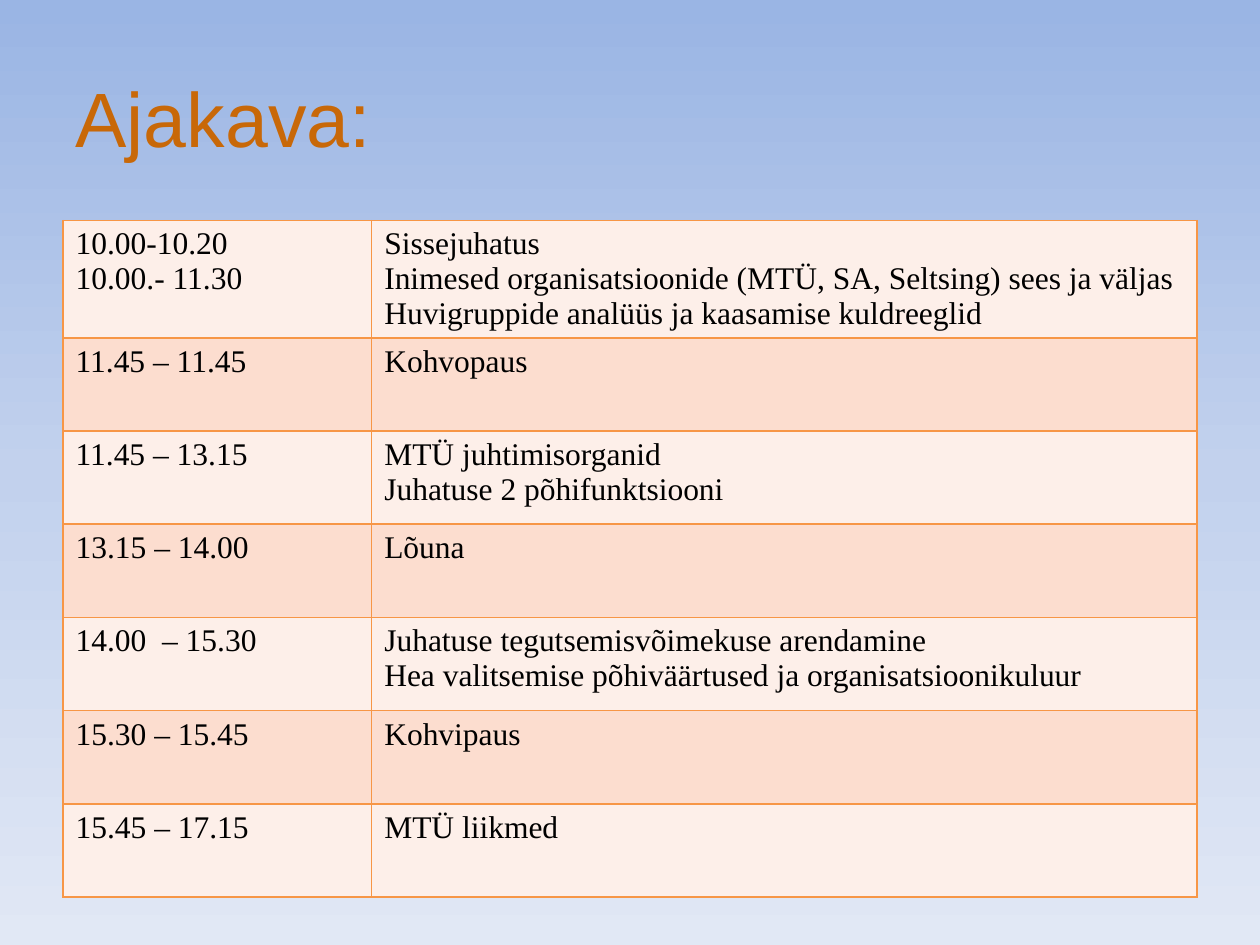
from lxml import etree
from pptx import Presentation
from pptx import util as u
from pptx.dml.color import RGBColor
from pptx.enum import text as t
from pptx.oxml import parse_xml
from pptx.oxml.ns import nsdecls

ROWS = [
    (["10.00-10.20", "10.00.- 11.30"],
     ["Sissejuhatus",
      "Inimesed organisatsioonide (MTÜ, SA, Seltsing) sees ja väljas",
      "Huvigruppide analüüs ja kaasamise kuldreeglid"]),
    (["11.45 – 11.45"], ["Kohvopaus"]),
    (["11.45 – 13.15"], ["MTÜ juhtimisorganid", "Juhatuse 2 põhifunktsiooni"]),
    (["13.15 – 14.00"], ["Lõuna"]),
    (["14.00  – 15.30"],
     ["Juhatuse tegutsemisvõimekuse arendamine",
      "Hea valitsemise põhiväärtused ja organisatsioonikuluur"]),
    (["15.30 – 15.45"], ["Kohvipaus"]),
    (["15.45 – 17.15"], ["MTÜ liikmed"]),
]
COLS = [2.45, 6.55]
ROW_H = 0.74
BANDS = ["FDEFE9", "FCDDCF"]
EDGE = "F79646"
SKY = [(0, "9AB5E4"), (50, "C2D1ED"), (100, "E1E8F5")]


def color(code):
    return RGBColor.from_string(code)


def write(frame, lines, size=18, font="Times New Roman", ink="000000",
          anchor=t.MSO_ANCHOR.TOP):
    """Put one paragraph per line into a text frame."""
    frame.word_wrap = True
    frame.vertical_anchor = anchor
    for i, line in enumerate(lines):
        para = frame.add_paragraph() if i else frame.paragraphs[0]
        para.alignment = t.PP_ALIGN.LEFT
        run = para.add_run()
        run.text = line
        run.font.size = u.Pt(size)
        run.font.name = font
        run.font.color.rgb = color(ink)


def paint(slide, stops):
    """Fill the background with a gradient from top to bottom."""
    marks = "".join(
        f'<a:gs pos="{pos * 1000}"><a:srgbClr val="{code}"/></a:gs>'
        for pos, code in stops)
    back = parse_xml(
        f'<p:bg {nsdecls("p", "a")}><p:bgPr><a:gradFill rotWithShape="1">'
        f'<a:gsLst>{marks}</a:gsLst><a:lin ang="5400000" scaled="0"/>'
        '</a:gradFill><a:effectLst/></p:bgPr></p:bg>')
    slide.shapes._spTree.addprevious(back)


def border(cell, code, width=1):
    """Draw all four edges of a cell; call before its fill is set."""
    props = cell._tc.get_or_add_tcPr()
    for side in "LRTB":
        props.append(parse_xml(
            f'<a:ln{side} {nsdecls("a")} w="{u.Pt(width)}"><a:solidFill>'
            f'<a:srgbClr val="{code}"/></a:solidFill></a:ln{side}>'))


def head(slide, words):
    title = slide.shapes.title
    title.left, title.top = u.Inches(0.5), u.Inches(0.3)
    title.width, title.height = u.Inches(9), u.Inches(1.25)
    write(title.text_frame, [words], size=44, font="Arial", ink="C86808",
          anchor=t.MSO_ANCHOR.MIDDLE)


def plan(slide, rows):
    """Add the timetable with alternating row colours."""
    grid = slide.shapes.add_table(
        len(rows), len(COLS), u.Inches(0.5), u.Inches(1.75),
        u.Inches(sum(COLS)), u.Inches(ROW_H * len(rows))).table
    grid.first_row = False
    for col, width in zip(grid.columns, COLS):
        col.width = u.Inches(width)
    for r, row in enumerate(rows):
        grid.rows[r].height = u.Inches(ROW_H)
        for c, lines in enumerate(row):
            cell = grid.cell(r, c)
            write(cell.text_frame, lines)
            border(cell, EDGE)
            cell.fill.solid()
            cell.fill.fore_color.rgb = color(BANDS[r % 2])


def main():
    deck = Presentation()
    deck.slide_width, deck.slide_height = u.Inches(10), u.Inches(7.5)
    slide = deck.slides.add_slide(deck.slide_layouts[5])
    paint(slide, SKY)
    head(slide, "Ajakava:")
    plan(slide, ROWS)
    deck.save("out.pptx")


if __name__ == "__main__":
    main()
